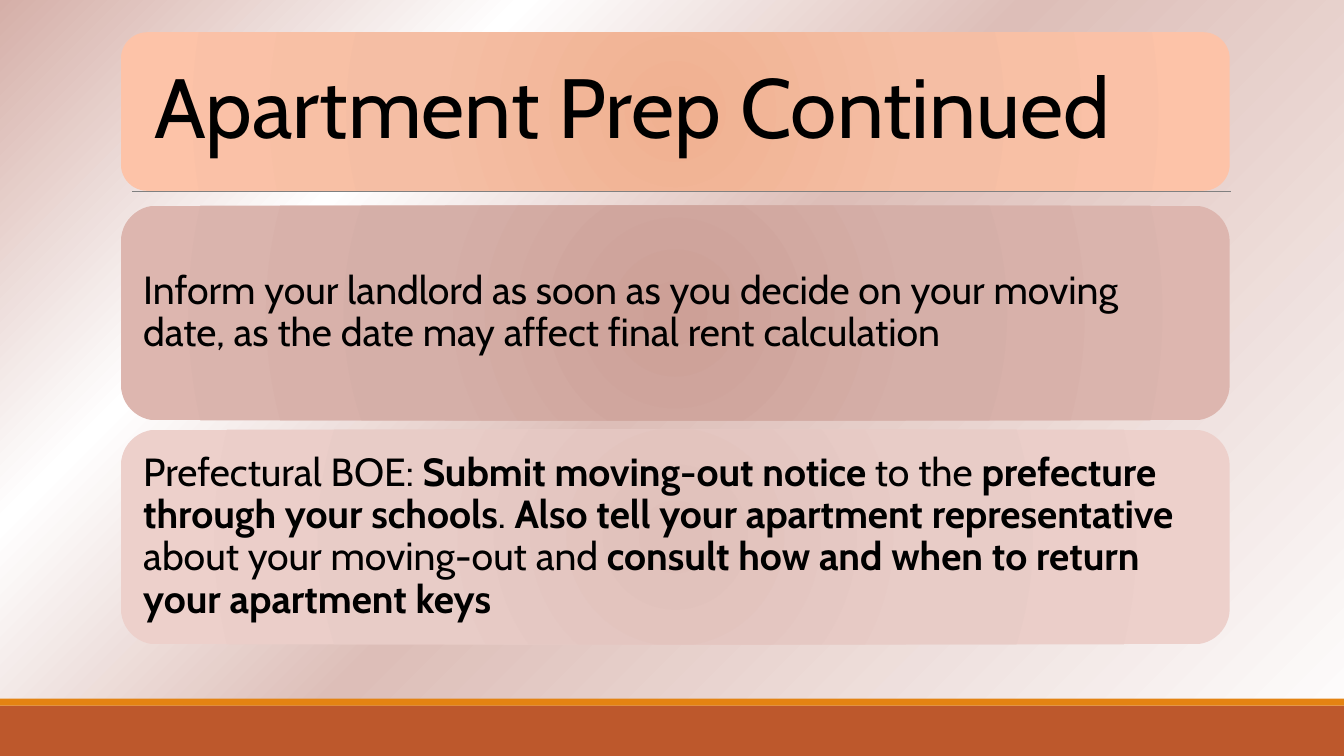
"""Build the slide on apartment preparation."""
from lxml import etree
from pptx import Presentation
from pptx.dml.color import RGBColor
from pptx.enum.shapes import MSO_CONNECTOR, MSO_SHAPE
from pptx.enum.text import MSO_ANCHOR, MSO_AUTO_SIZE, PP_ALIGN
from pptx.oxml.ns import qn
from pptx.util import Pt

RECTANGLE, ROUNDED = MSO_SHAPE.RECTANGLE, MSO_SHAPE.ROUNDED_RECTANGLE
STRAIGHT = MSO_CONNECTOR.STRAIGHT
MIDDLE, LEFT, NO_FIT = MSO_ANCHOR.MIDDLE, PP_ALIGN.LEFT, MSO_AUTO_SIZE.NONE

WHITE = RGBColor(0xFF, 0xFF, 0xFF)
BLACK = RGBColor(0x00, 0x00, 0x00)
GREY = RGBColor(0x80, 0x80, 0x80)
RUST = RGBColor(0xBD, 0x58, 0x2C)
ORANGE = RGBColor(0xE4, 0x83, 0x12)
ROSE = RGBColor(0xDD, 0xBE, 0xB8)
PEACH_DEEP = RGBColor(0xF0, 0xB1, 0x91)
PEACH_MID = RGBColor(0xF5, 0xBE, 0xA4)
PEACH = RGBColor(0xFD, 0xC3, 0xA8)
MAUVE_DEEP = RGBColor(0xCD, 0xA0, 0x97)
MAUVE_MID = RGBColor(0xD5, 0xAF, 0xA8)
MAUVE = RGBColor(0xDD, 0xB6, 0xAF)
BLUSH_DEEP = RGBColor(0xE0, 0xC0, 0xBA)
BLUSH_MID = RGBColor(0xE8, 0xCC, 0xC7)
BLUSH = RGBColor(0xED, 0xD0, 0xCB)

FONT = "Cabin"
SLIDE_WIDTH, SLIDE_HEIGHT = 960, 540
CARD_LEFT, CARD_WIDTH = 86.4, 792
NOTICE_TOP, NOTICE_HEIGHT, NOTICE_STEP = 146.9, 153.4, 160

BACKDROP = [(0, WHITE), (51, ROSE), (75, WHITE), (100, MAUVE_MID), (100, MAUVE)]
TITLE = [("Apartment Prep Continued", False)]
NOTICES = [
    ((MAUVE_DEEP, MAUVE_MID, MAUVE), [
        ("Inform your landlord as soon as you decide on your moving date, "
         "as the date may affect final rent calculation", False)]),
    ((BLUSH_DEEP, BLUSH_MID, BLUSH), [
        ("Prefectural BOE: ", False),
        ("Submit moving-out notice ", True),
        ("to the ", False),
        ("prefecture through your schools", True),
        (". ", False),
        ("Also tell your apartment representative ", True),
        ("about your moving-out and ", False),
        ("consult how and when to return your apartment keys", True)]),
]


def apply(target, values):
    """Set every attribute named in values."""
    for name, value in values.items():
        setattr(target, name, value)


def paint_radial(fill, owner, stops, focus):
    """Give a fill a circular gradient around the focus sides."""
    fill.gradient()
    gradient = owner.find(".//" + qn("a:gradFill"))
    for child in list(gradient):
        gradient.remove(child)
    stop_list = etree.SubElement(gradient, qn("a:gsLst"))
    for percent, color in stops:
        stop = etree.SubElement(stop_list, qn("a:gs"), pos=str(percent * 1000))
        etree.SubElement(stop, qn("a:srgbClr"), val=str(color))
    circle = etree.SubElement(gradient, qn("a:path"), path="circle")
    etree.SubElement(circle, qn("a:fillToRect"),
                     {side: "100000" for side in focus})
    if focus == "lt":
        etree.SubElement(gradient, qn("a:tileRect"), r="-100000", b="-100000")


def add_panel(slide, kind, box):
    """Add a shape without line or shadow."""
    panel = slide.shapes.add_shape(kind, *map(Pt, box))
    panel.shadow.inherit = False
    panel.line.fill.background()
    return panel


def add_band(slide, top, height, color):
    """Add a full-width footer band."""
    band = add_panel(slide, RECTANGLE, (0, top, SLIDE_WIDTH, height))
    band.fill.solid()
    band.fill.fore_color.rgb = color


def add_rule(slide, left, right, y):
    """Add the thin rule under the title."""
    rule = slide.shapes.add_connector(STRAIGHT, Pt(left), Pt(y), Pt(right), Pt(y))
    apply(rule.line, {"width": Pt(0.5)})
    rule.line.color.rgb = GREY
    etree.SubElement(rule.element.spPr, qn("a:effectLst"))


def write_text(placeholder, box, wording, size, inset):
    """Place a placeholder in front and fill it with formatted runs."""
    apply(placeholder, dict(zip(("left", "top", "width", "height"), map(Pt, box))))
    frame = placeholder.text_frame
    apply(frame, {"word_wrap": True, "auto_size": NO_FIT,
                  "vertical_anchor": MIDDLE})
    apply(frame, {"margin_" + side: Pt(inset)
                  for side in ("left", "top", "right", "bottom")})
    paragraph = frame.paragraphs[0]
    apply(paragraph, {"alignment": LEFT, "line_spacing": 0.9,
                      "space_before": Pt(0), "space_after": Pt(0)})
    for words, bold in wording:
        run = paragraph.add_run()
        run.text = words
        apply(run.font, {"name": FONT, "size": Pt(size), "bold": bold})
        run.font.color.rgb = BLACK
    properties = paragraph._p.get_or_add_pPr()
    properties.set("marL", "0")
    properties.set("indent", "0")
    etree.SubElement(properties, qn("a:buNone"))
    placeholder.element.getparent().append(placeholder.element)


def add_card(slide, placeholder, top, height, colors, wording, size, inset, pad):
    """Add a rounded gradient card with its text in a placeholder."""
    card = add_panel(slide, ROUNDED, (CARD_LEFT, top, CARD_WIDTH, height))
    paint_radial(card.fill, card.element, zip((0, 45, 100), colors), "ltrb")
    text_box = (CARD_LEFT + pad, top + pad,
                CARD_WIDTH - 2 * pad, height - 2 * pad)
    write_text(placeholder, text_box, wording, size, inset)


def main():
    """Build and save the slide."""
    deck = Presentation()
    apply(deck, {"slide_width": Pt(SLIDE_WIDTH), "slide_height": Pt(SLIDE_HEIGHT)})
    slide = deck.slides.add_slide(deck.slide_layouts.get_by_name("Two Content"))
    title, *bodies = slide.placeholders
    paint_radial(slide.background.fill, slide.element, BACKDROP, "lt")
    add_band(slide, 504, 36, RUST)
    add_band(slide, 499, 5, ORANGE)
    add_rule(slide, 94.3, 879, 136.8)
    add_card(slide, title, 23, 113.3, (PEACH_DEEP, PEACH_MID, PEACH),
             TITLE, 60, 18, 5.6)
    for row, (body, (colors, wording)) in enumerate(zip(bodies, NOTICES)):
        add_card(slide, body, NOTICE_TOP + row * NOTICE_STEP, NOTICE_HEIGHT,
                 colors, wording, 28, 8.4, 7.5)
    deck.save("out.pptx")


if __name__ == "__main__":
    main()
